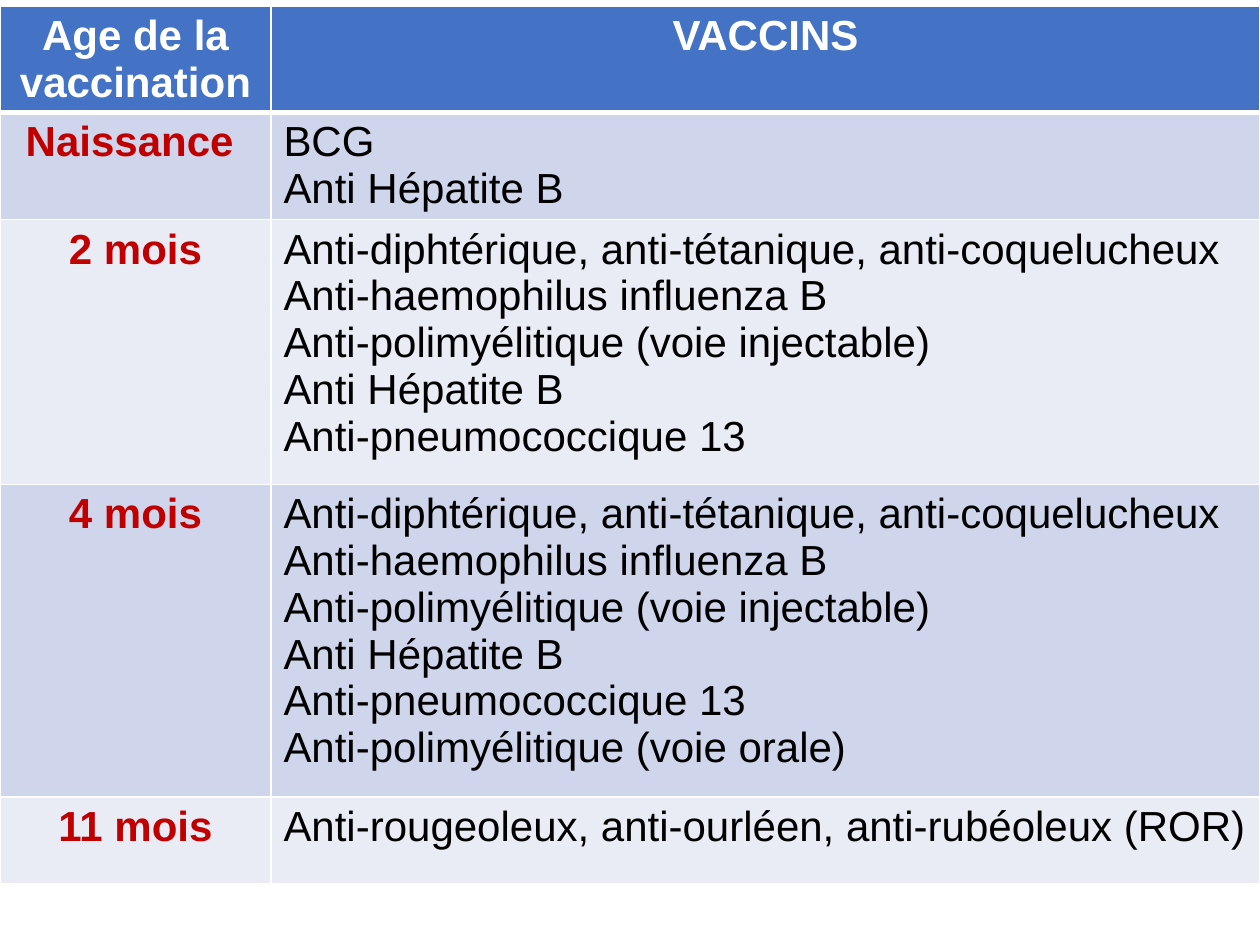
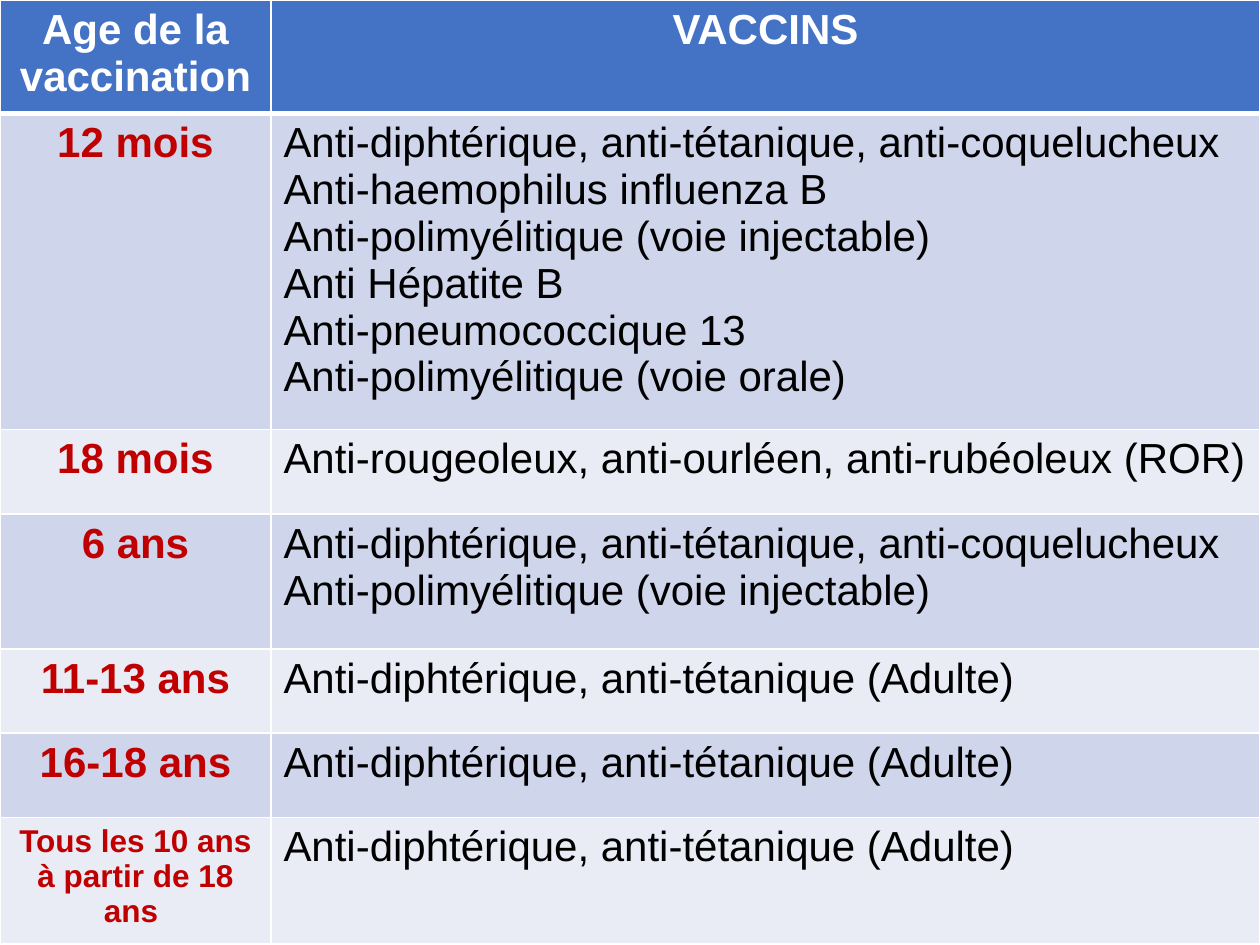
from lxml.etree import SubElement
from pptx import Presentation
from pptx.dml.color import RGBColor
from pptx.enum.text import PP_ALIGN
from pptx.oxml.ns import qn
from pptx.util import Inches, Pt

WHITE = RGBColor(0xFF, 0xFF, 0xFF)
BLACK = RGBColor(0x00, 0x00, 0x00)
RED = RGBColor(0xC0, 0x00, 0x00)
BLUE = RGBColor(0x44, 0x72, 0xC4)
BANDS = [RGBColor(0xE9, 0xEB, 0xF5), RGBColor(0xCF, 0xD5, 0xEA)]
FONT = "Arial"
COL_WIDTHS = [2.15, 7.85]

DTC = "Anti-diphtérique, anti-tétanique, anti-coquelucheux"
DT_ADULT = "Anti-diphtérique, anti-tétanique (Adulte)"
POLIO = "Anti-polimyélitique (voie injectable)"
POLIO_ORAL = "Anti-polimyélitique (voie orale)"
HEP_B = "Anti Hépatite B"
ROR = "Anti-rougeoleux, anti-ourléen, anti-rubéoleux (ROR)"
INFANT = [DTC, "Anti-haemophilus influenza B", POLIO, HEP_B, "Anti-pneumococcique 13"]
HEADER = ("Age de la vaccination", 24, ["VACCINS"])

SCHEDULES = [
    (0.05, [0.83, 0.85, 2.1, 2.48, 0.69], [
        ("Naissance ", 24, ["BCG", HEP_B]),
        ("2 mois", 24, INFANT),
        ("4 mois", 24, INFANT + [POLIO_ORAL]),
        ("11 mois", 24, [ROR]),
    ]),
    (0, [0.9, 2.51, 0.67, 1.07, 0.67, 0.67, 1], [
        ("12 mois", 24, INFANT + [POLIO_ORAL]),
        ("18 mois", 24, [ROR]),
        ("6 ans", 24, [DTC, POLIO]),
        ("11-13 ans", 24, [DT_ADULT]),
        ("16-18 ans", 24, [DT_ADULT]),
        ("Tous les 10 ans à partir de 18 ans ", 18, [DT_ADULT]),
    ]),
]


def add_borders(cell, top, bottom):
    tc_pr = cell._tc.get_or_add_tcPr()
    for side, width in (("L", 1), ("R", 1), ("T", top), ("B", bottom)):
        ln = SubElement(tc_pr, qn(f"a:ln{side}"), w=str(Pt(width)))
        fill = SubElement(ln, qn("a:solidFill"))
        SubElement(fill, qn("a:srgbClr"), val=str(WHITE))


def fill_cell(cell, lines, size, color, bold, align, background):
    cell.fill.solid()
    cell.fill.fore_color.rgb = background
    tf = cell.text_frame
    for i, line in enumerate(lines):
        p = tf.add_paragraph() if i else tf.paragraphs[0]
        p.alignment = align
        r = p.add_run()
        r.text = line
        r.font.name = FONT
        r.font.size = Pt(size)
        r.font.bold = bold
        r.font.color.rgb = color


prs = Presentation()
prs.slide_width = Inches(10)
prs.slide_height = Inches(7.5)

for top, heights, ages in SCHEDULES:
    s = prs.slides.add_slide(prs.slide_layouts[6])
    rows = [HEADER] + ages
    table = s.shapes.add_table(len(rows), 2, 0, Inches(top),
                               Inches(sum(COL_WIDTHS)), Inches(sum(heights))).table
    for column, width in zip(table.columns, COL_WIDTHS):
        column.width = Inches(width)
    for i, (age, size, vaccines) in enumerate(rows):
        row = table.rows[i]
        row.height = Inches(heights[i])
        for cell in row.cells:
            add_borders(cell, 3 if i == 1 else 1, 3 if i == 0 else 1)
        header = i == 0
        background = BLUE if header else BANDS[i % 2]
        fill_cell(row.cells[0], [age], size, WHITE if header else RED, True,
                  PP_ALIGN.CENTER, background)
        fill_cell(row.cells[1], vaccines, 24, WHITE if header else BLACK, header,
                  PP_ALIGN.CENTER if header else PP_ALIGN.LEFT, background)

prs.save("out.pptx")
